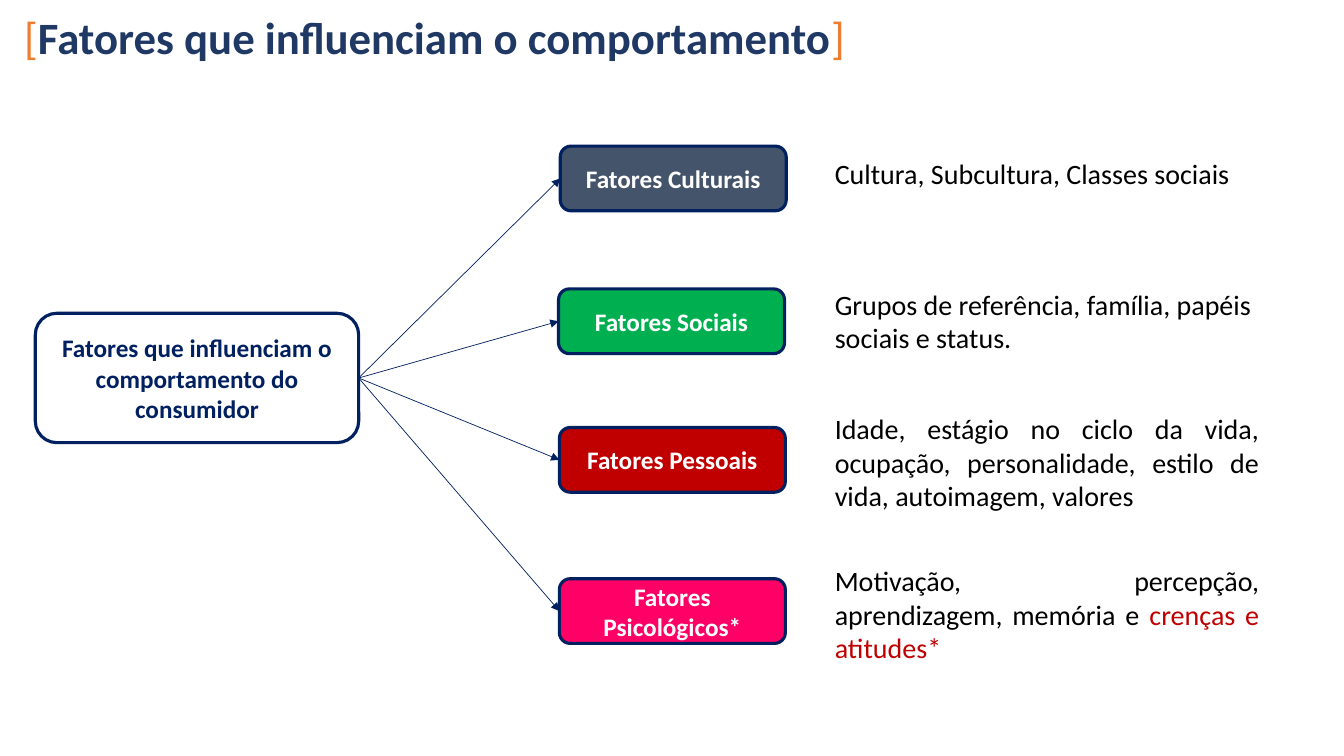
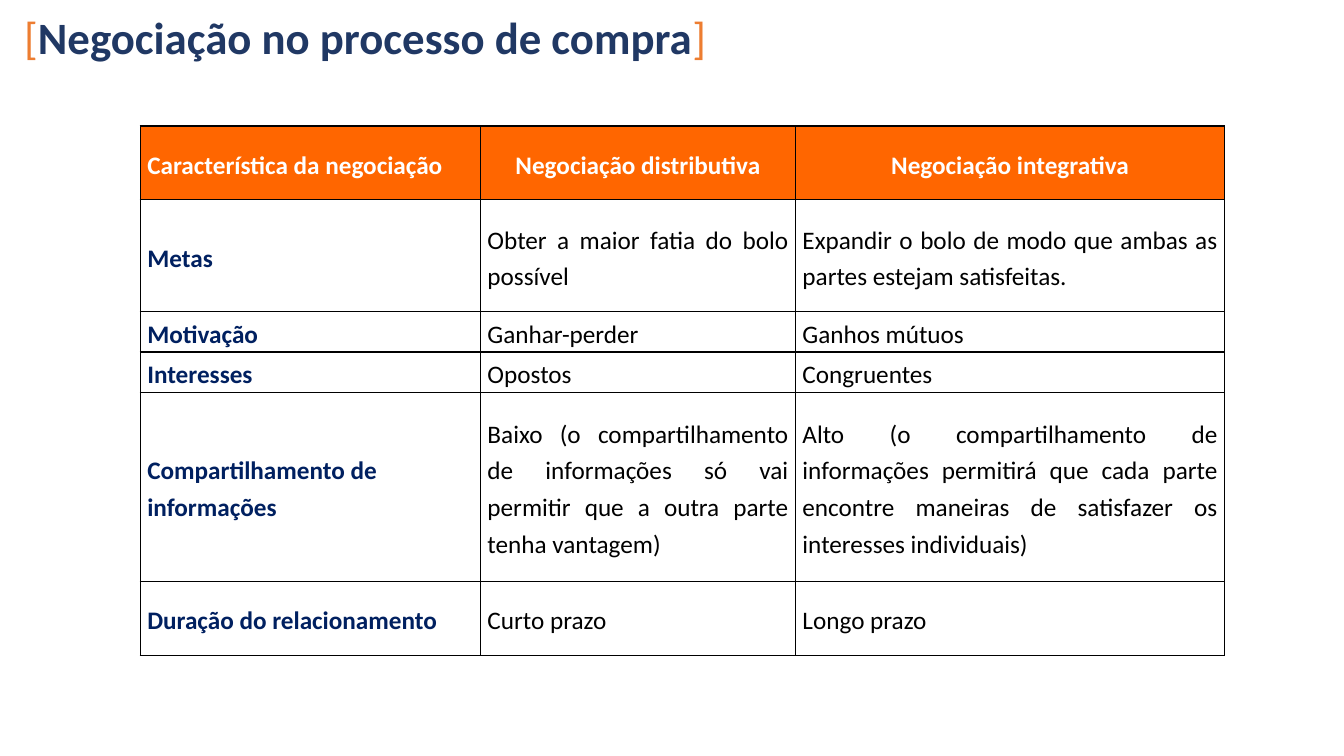
import dataclasses

import lxml.etree
import pptx
import pptx.dml.color
import pptx.enum.shapes
import pptx.enum.text
import pptx.oxml.ns
import pptx.util

ALIGN = pptx.enum.text.PP_ALIGN
ANCHOR = pptx.enum.text.MSO_ANCHOR
RIGHT_SIDE, LEFT_SIDE = 3, 1


@dataclasses.dataclass(frozen=True)
class Theme:
    font: str = "Calibri"
    title_size: int = 32
    note_size: int = 20
    label_size: int = 18
    title: str = "203864"
    bracket: str = "ED7D31"
    navy: str = "002060"
    white: str = "FFFFFF"
    black: str = "000000"
    slate: str = "44546A"
    green: str = "00B050"
    red: str = "C00000"
    pink: str = "FF0066"
    header: str = "FF6600"
    outline: float = 2.25
    arrow: float = 0.5
    border: float = 1


THEME = Theme()


def rgb(value):
    return pptx.dml.color.RGBColor.from_string(value)


def add_xml(parent, tag, **attributes):
    return lxml.etree.SubElement(parent, pptx.oxml.ns.qn(tag), **attributes)


def write_text(frame, text, *, size, color=THEME.black, bold=False, align=ALIGN.LEFT, spacing=None):
    paragraph = frame.paragraphs[0]
    paragraph.alignment = align
    if spacing:
        paragraph.line_spacing = spacing
    parts = [(text, {})] if isinstance(text, str) else text
    for words, changes in parts:
        run = paragraph.add_run()
        run.text = words
        run.font.name = THEME.font
        run.font.size = pptx.util.Pt(size)
        run.font.bold = changes.get("bold", bold)
        run.font.color.rgb = rgb(changes.get("color", color))


class Deck:
    COLUMNS, ROWS = 160, 90

    def __init__(self, theme):
        self.theme = theme
        self.presentation = pptx.Presentation()
        self.presentation.slide_width = pptx.util.Inches(13.33)
        self.presentation.slide_height = pptx.util.Inches(7.5)
        self.slide = None

    def x(self, columns):
        return round(self.presentation.slide_width * columns / self.COLUMNS)

    def y(self, rows):
        return round(self.presentation.slide_height * rows / self.ROWS)

    def area(self, left, top, width, height):
        return self.x(left), self.y(top), self.x(width), self.y(height)

    def new_slide(self, title, title_width):
        self.slide = self.presentation.slides.add_slide(self.presentation.slide_layouts[6])
        bracket = {"color": self.theme.bracket, "bold": False}
        self.text((1.7, 0.6, title_width, 7.7), [("[", bracket), (title, {}), ("]", bracket)],
                  size=self.theme.title_size, color=self.theme.title, bold=True)

    def text(self, place, text, **style):
        frame = self.slide.shapes.add_textbox(*self.area(*place)).text_frame
        frame.word_wrap = True
        frame.auto_size = pptx.enum.text.MSO_AUTO_SIZE.SHAPE_TO_FIT_TEXT
        write_text(frame, text, **style)

    def box(self, place, text, fill, color):
        box = self.slide.shapes.add_shape(
            pptx.enum.shapes.MSO_SHAPE.ROUNDED_RECTANGLE, *self.area(*place))
        box.shadow.inherit = False
        box.fill.solid()
        box.fill.fore_color.rgb = rgb(fill)
        box.line.color.rgb = rgb(self.theme.navy)
        box.line.width = pptx.util.Pt(self.theme.outline)
        box.text_frame.word_wrap = True
        box.text_frame.vertical_anchor = ANCHOR.MIDDLE
        write_text(box.text_frame, text, size=self.theme.label_size, color=color,
                   bold=True, align=ALIGN.CENTER)
        return box

    def arrow(self, source, target):
        arrow = self.slide.shapes.add_connector(
            pptx.enum.shapes.MSO_CONNECTOR.STRAIGHT, 0, 0, 0, 0)
        arrow.begin_connect(source, RIGHT_SIDE)
        arrow.end_connect(target, LEFT_SIDE)
        arrow.line.color.rgb = rgb(self.theme.navy)
        arrow.line.width = pptx.util.Pt(self.theme.arrow)
        properties = arrow.element.spPr
        add_xml(properties.find(pptx.oxml.ns.qn("a:ln")), "a:tailEnd", type="triangle")
        add_xml(properties, "a:effectLst")

    def table(self, left, top, widths, heights, content):
        table = self.slide.shapes.add_table(
            len(heights), len(widths),
            *self.area(left, top, sum(widths), sum(heights))).table
        table.first_row = table.horz_banding = False
        for column, width in zip(table.columns, widths):
            column.width = self.x(width)
        for row, height in zip(table.rows, heights):
            row.height = self.y(height)
        for row, texts in enumerate(content):
            for column, text in enumerate(texts):
                self.cell(table.cell(row, column), text, row == 0, column == 0)

    def cell(self, cell, text, is_header, is_label):
        cell.margin_left = cell.margin_right = pptx.util.Inches(0.07)
        cell.margin_top = cell.margin_bottom = 0
        cell.vertical_anchor = ANCHOR.MIDDLE
        self.borders(cell)
        if is_header:
            cell.fill.solid()
            cell.fill.fore_color.rgb = rgb(self.theme.header)
            color, align = self.theme.white, ALIGN.CENTER
        else:
            cell.fill.background()
            color, align = self.theme.black, ALIGN.JUSTIFY
        if is_label:
            align = ALIGN.LEFT
            color = color if is_header else self.theme.navy
        write_text(cell.text_frame, text, size=self.theme.label_size, color=color,
                   bold=is_header or is_label, align=align, spacing=1.2)

    def borders(self, cell):
        properties = cell._tc.get_or_add_tcPr()
        for side in "LRTB":
            border = add_xml(properties, f"a:ln{side}", w=str(pptx.util.Pt(self.theme.border)))
            add_xml(add_xml(border, "a:solidFill"), "a:srgbClr", val=self.theme.black)


def factors_slide(deck):
    theme = deck.theme
    deck.new_slide("Fatores que influenciam o comportamento", 113.5)
    consumer = deck.box((4.2, 37.3, 38.5, 15.4),
                        "Fatores que influenciam o comportamento do consumidor",
                        theme.white, theme.navy)
    factors = [
        ("Fatores Culturais", theme.slate, 66.7, 17.4, 18, 5.3, ALIGN.LEFT,
         "Cultura, Subcultura, Classes sociais"),
        ("Fatores Sociais", theme.green, 66.5, 34.4, 33.6, 9.2, ALIGN.LEFT,
         "Grupos de referência, família, papéis sociais e status."),
        ("Fatores Pessoais", theme.red, 66.6, 50.9, 48.4, 13.3, ALIGN.JUSTIFY,
         "Idade, estágio no ciclo da vida, ocupação, personalidade, "
         "estilo de vida, autoimagem, valores"),
        ("Fatores Psicológicos*", theme.pink, 66.6, 68.9, 66.5, 13.3, ALIGN.JUSTIFY,
         [("Motivação, percepção, aprendizagem, memória e ", {}),
          ("crenças e atitudes*", {"color": theme.red})]),
    ]
    for name, fill, left, top, note_top, note_height, align, note in factors:
        factor = deck.box((left, top, 26.9, 7.7), name, fill, theme.white)
        deck.arrow(consumer, factor)
        deck.text((98.2, note_top, 52.9, note_height), note, size=theme.note_size, align=align)


def negotiation_slide(deck):
    deck.new_slide("Negociação no processo de compra", 126.5)
    deck.table(16.7, 15, [40.5, 37.5, 51.1], [8.8, 13.3, 4.8, 4.8, 22.5, 8.8], [
        ("Característica da negociação", "Negociação distributiva", "Negociação integrativa"),
        ("Metas", "Obter a maior fatia do bolo possível",
         "Expandir o bolo de modo que ambas as partes estejam satisfeitas."),
        ("Motivação", "Ganhar-perder", "Ganhos mútuos"),
        ("Interesses", "Opostos", "Congruentes"),
        ("Compartilhamento de informações",
         "Baixo (o compartilhamento de informações só vai permitir que a outra parte "
         "tenha vantagem)",
         "Alto (o compartilhamento de informações permitirá que cada parte encontre "
         "maneiras de satisfazer os interesses individuais)"),
        ("Duração do relacionamento", "Curto prazo", "Longo prazo"),
    ])


def main():
    deck = Deck(THEME)
    factors_slide(deck)
    negotiation_slide(deck)
    deck.presentation.save("out.pptx")


if __name__ == "__main__":
    main()
